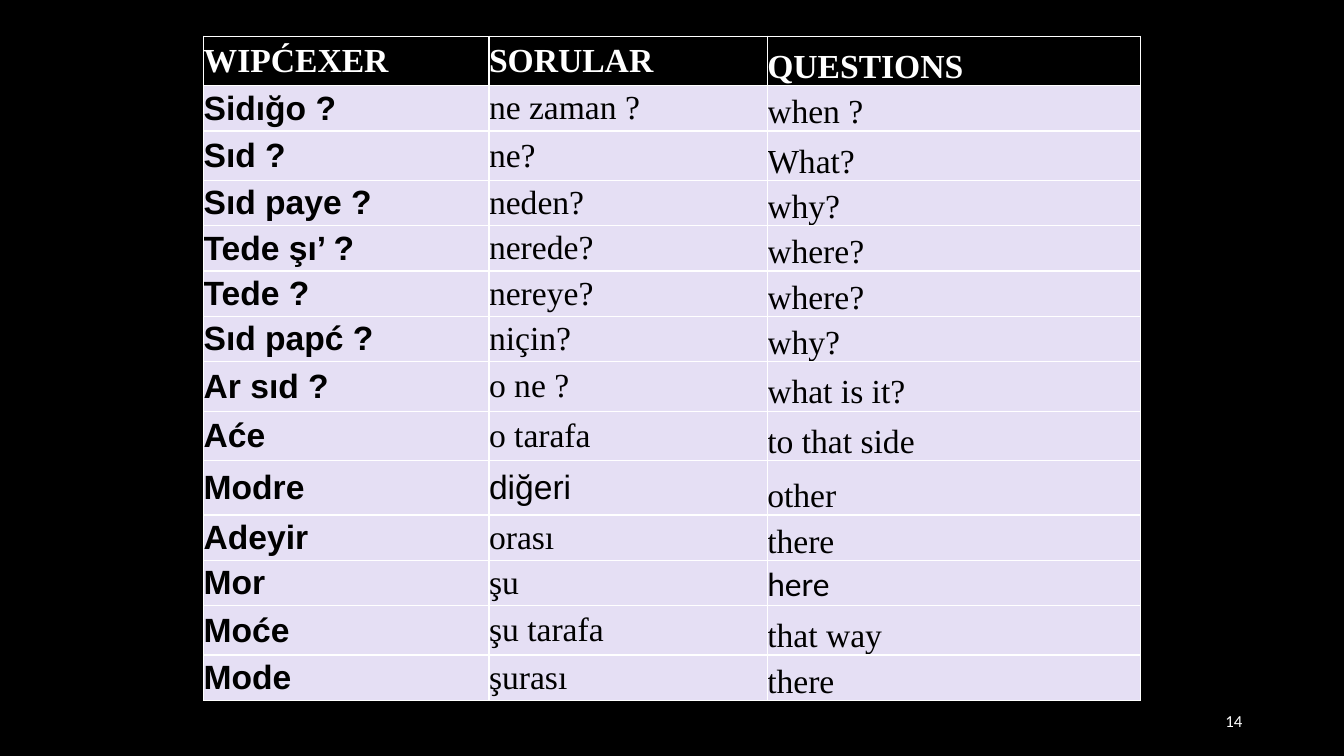
from lxml.etree import SubElement
from pptx import Presentation
from pptx.dml.color import RGBColor
from pptx.enum.text import MSO_ANCHOR as Anchor, PP_ALIGN as Align
from pptx.oxml.ns import qn
from pptx.util import Inches, Pt

BLACK = RGBColor(0x00, 0x00, 0x00)
WHITE = RGBColor(0xFF, 0xFF, 0xFF)
LAVENDER = RGBColor(0xE5, 0xDF, 0xF4)

SANS, SERIF, NUMBER_FONT = "Arial", "Times New Roman", "Calibri"

HEADINGS = ("WIPĆEXER", "SORULAR", "QUESTIONS")
COLUMN_WIDTHS = (2.83, 2.76, 3.7)
COLUMN_FONTS = (SANS, SERIF, SERIF)
COLUMN_ANCHORS = (Anchor.MIDDLE, Anchor.MIDDLE, Anchor.BOTTOM)
HEADING_HEIGHT = 0.49

# Row height, then the word in each language
QUESTIONS = (
    (0.45, "Sidığo ?", "ne zaman ?", "when ?"),
    (0.49, "Sıd ?", "ne?", "What?"),
    (0.45, "Sıd paye ?", "neden?", "why?"),
    (0.45, "Tede şı’ ?", "nerede?", "where?"),
    (0.45, "Tede ?", "nereye?", "where?"),
    (0.45, "Sıd papć ?", "niçin?", "why?"),
    (0.49, "Ar sıd ?", "o ne ?", "what is it?"),
    (0.49, "Aće", "o tarafa", "to that side"),
    (0.54, "Modre", "diğeri", "other"),
    (0.45, "Adeyir", "orası", "there"),
    (0.45, "Mor", "şu", "here"),
    (0.49, "Moće", "şu tarаfa", "that way"),
    (0.45, "Mode", "şurası", "there"),
)
SPECIAL_FONTS = {"diğeri": SANS, "here": NUMBER_FONT}


def add_run(paragraph, text, font, size, color, bold=False):
    run = paragraph.add_run()
    run.text = text
    run.font.name = font
    run.font.size = Pt(size)
    run.font.bold = bold
    run.font.color.rgb = color


def add_borders(cell):
    properties = cell._tc.get_or_add_tcPr()
    for side in ("a:lnL", "a:lnR", "a:lnT", "a:lnB"):
        line = SubElement(properties, qn(side), w=str(Pt(1)))
        fill = SubElement(line, qn("a:solidFill"))
        SubElement(fill, qn("a:srgbClr"), val=str(WHITE))


def fill_cell(cell, text, font, anchor, background, color, bold):
    cell.margin_left = cell.margin_right = 0
    cell.margin_top = cell.margin_bottom = 0
    cell.vertical_anchor = anchor
    add_borders(cell)
    cell.fill.solid()
    cell.fill.fore_color.rgb = background
    add_run(cell.text_frame.paragraphs[0], text, font, 24, color, bold)


def add_question_table(slide):
    heights = [HEADING_HEIGHT] + [height for height, *_ in QUESTIONS]
    table = slide.shapes.add_table(
        len(heights), len(HEADINGS), Inches(2.02), Inches(0.36),
        Inches(sum(COLUMN_WIDTHS)), Inches(sum(heights))).table
    for column, width in zip(table.columns, COLUMN_WIDTHS):
        column.width = Inches(width)
    for row, height in zip(table.rows, heights):
        row.height = Inches(height)

    # Heading row
    for col, heading in enumerate(HEADINGS):
        fill_cell(table.cell(0, col), heading, SERIF, COLUMN_ANCHORS[col],
                  BLACK, WHITE, True)

    # Question words, the first language in bold
    for row, (_, *words) in enumerate(QUESTIONS, start=1):
        for col, word in enumerate(words):
            font = SPECIAL_FONTS.get(word, COLUMN_FONTS[col])
            fill_cell(table.cell(row, col), word, font, COLUMN_ANCHORS[col],
                      LAVENDER, BLACK, col == 0)


def add_page_number(slide, number):
    frame = slide.shapes.add_textbox(
        Inches(9.42), Inches(6.95), Inches(3), Inches(0.4)).text_frame
    frame.word_wrap = True
    frame.vertical_anchor = Anchor.MIDDLE
    paragraph = frame.paragraphs[0]
    paragraph.alignment = Align.RIGHT
    add_run(paragraph, number, NUMBER_FONT, 12, WHITE)


def main():
    deck = Presentation()
    deck.slide_width = Inches(13.33)
    deck.slide_height = Inches(7.5)
    slide = deck.slides.add_slide(deck.slide_layouts[6])
    slide.background.fill.solid()
    slide.background.fill.fore_color.rgb = BLACK
    add_page_number(slide, "14")
    add_question_table(slide)
    deck.save("out.pptx")


if __name__ == "__main__":
    main()
